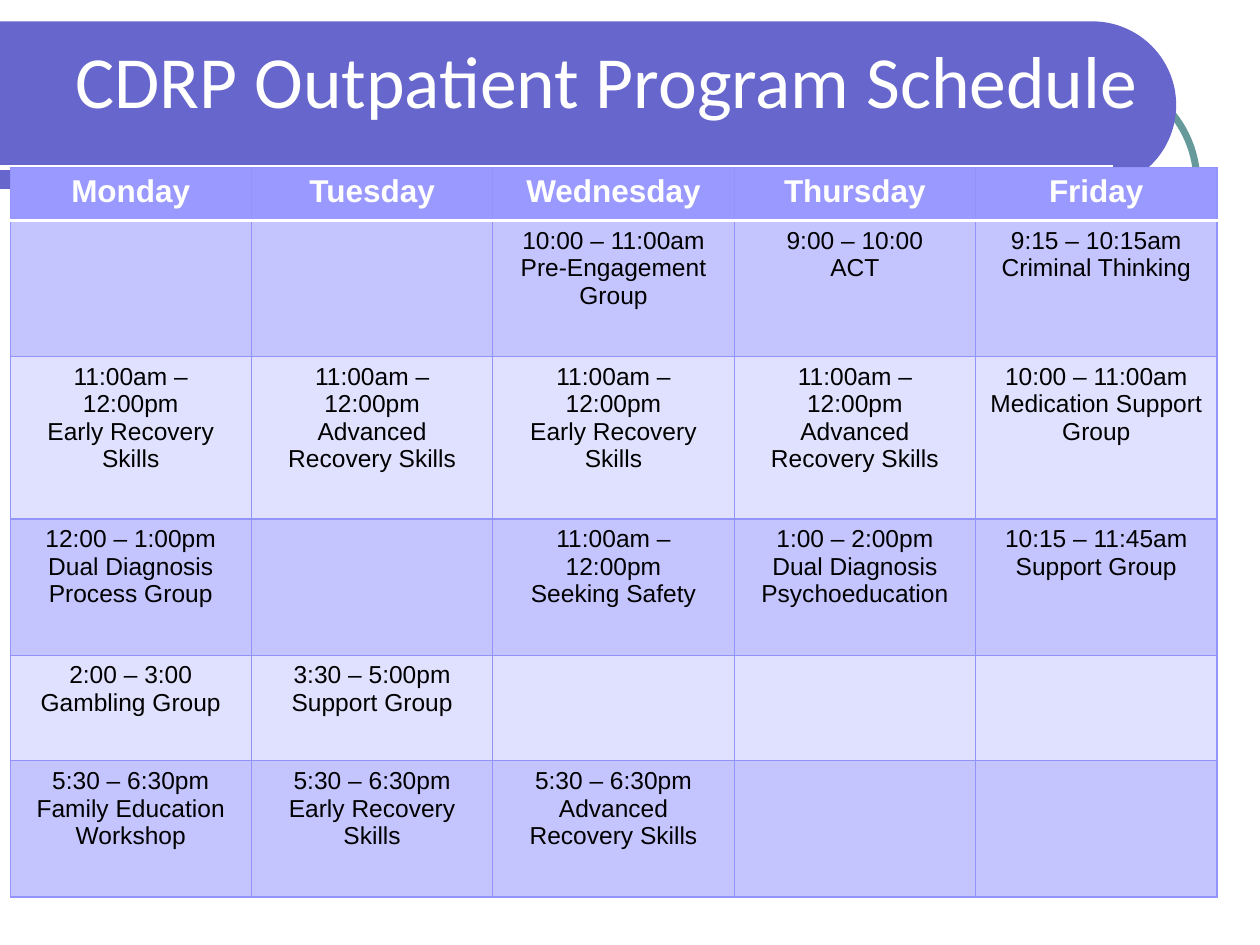
"""Build the weekly outpatient program schedule slide."""
import math

from lxml import etree
from pptx import Presentation
from pptx.dml.color import RGBColor
from pptx.enum import shapes, text
from pptx.oxml import ns
from pptx.util import Inches, Pt

TITLE = "CDRP Outpatient Program Schedule"
DAYS = ["Monday", "Tuesday", "Wednesday", "Thursday", "Friday"]
EARLY, ADVANCED = "Early Recovery Skills", "Advanced Recovery Skills"
LATE_MORNING, EVENING = "11:00am – 12:00pm", "5:30 – 6:30pm"
SESSIONS = [
    [[], [], ["10:00 – 11:00am", "Pre-Engagement Group"],
     ["9:00 – 10:00", "ACT"], ["9:15 – 10:15am", "Criminal Thinking"]],
    [[LATE_MORNING, EARLY], [LATE_MORNING, ADVANCED], [LATE_MORNING, EARLY],
     [LATE_MORNING, ADVANCED], ["10:00 – 11:00am", "Medication Support Group"]],
    [["12:00 – 1:00pm", "Dual Diagnosis Process Group"], [],
     [LATE_MORNING, "Seeking Safety"],
     ["1:00 – 2:00pm", "Dual Diagnosis Psychoeducation"],
     ["10:15 – 11:45am Support Group"]],
    [["2:00 – 3:00", "Gambling Group"], ["3:30 – 5:00pm", "Support Group"], [], [], []],
    [[EVENING, "Family Education Workshop"], [EVENING, EARLY], [EVENING, ADVANCED], [], []],
]
ROW_HEIGHTS = [0.42, 1.08, 1.29, 1.08, 0.84, 1.08]
BAND_FILLS = ["E0E0FF", "C4C4FF"]
HEADER_FONT = {"name": "Arial", "size": Pt(18), "bold": True}
BODY_FONT = {"name": "Arial", "size": Pt(14), "bold": False}
TITLE_FONT = {"name": "Calibri", "size": Pt(42), "bold": False}


def color(value):
    return RGBColor.from_string(value)


def paint(fill, value):
    fill.solid()
    fill.fore_color.rgb = color(value)


def write(frame, lines, font, ink, align):
    for index, line in enumerate(lines):
        para = frame.paragraphs[0] if index == 0 else frame.add_paragraph()
        para.alignment = align
        span = para.add_run()
        span.text = line
        for name, value in font.items():
            setattr(span.font, name, value)
        span.font.color.rgb = color(ink)


def set_borders(cell, borders):
    props = cell._tc.get_or_add_tcPr()
    for index, (side, (value, width)) in enumerate(borders.items()):
        line = etree.Element(ns.qn(f"a:ln{side}"), w=str(Pt(width)))
        solid = etree.SubElement(line, ns.qn("a:solidFill"))
        etree.SubElement(solid, ns.qn("a:srgbClr"), val=value)
        props.insert(index, line)


def add_frame(page):
    frame = page.shapes.add_shape(
        shapes.MSO_SHAPE.ROUNDED_RECTANGLE,
        Inches(0.42), Inches(0.58), Inches(9.08), Inches(6.25))
    frame.adjustments[0] = 0.14
    frame.shadow.inherit = False
    frame.fill.background()
    frame.line.color.rgb = color("669999")
    frame.line.width = Pt(4)


def add_banner(page):
    top, bottom, center_x = 0.17, 1.5, 8.67
    radius, middle = (bottom - top) / 2, (top + bottom) / 2
    angles = [math.radians(degree) for degree in range(-90, 91, 3)]
    arc = [(center_x + radius * math.cos(angle), middle + radius * math.sin(angle))
           for angle in angles]
    builder = page.shapes.build_freeform(0, Inches(top))
    builder.add_line_segments(
        [(Inches(x), Inches(y)) for x, y in arc + [(0, bottom)]], close=True)
    banner = builder.convert_to_shape()
    banner.shadow.inherit = False
    paint(banner.fill, "6666CC")
    banner.line.fill.background()


def add_rule(page):
    rule = page.shapes.add_connector(
        shapes.MSO_CONNECTOR.STRAIGHT, 0, Inches(1.33), Inches(8.83), Inches(1.33))
    rule.line.color.rgb = color("FFFFFF")
    rule.line.width = Pt(3)
    etree.SubElement(rule._element.spPr, ns.qn("a:effectLst"))


def place_title(page):
    title = page.shapes.title
    title.left, title.top, title.width, title.height = map(Inches, (0.5, 0, 9, 1.25))
    title.text_frame.vertical_anchor = text.MSO_ANCHOR.MIDDLE
    write(title.text_frame, [TITLE], TITLE_FONT, "FFFFFF", text.PP_ALIGN.LEFT)
    page.shapes._spTree.append(title._element)


def add_schedule(page):
    rows = [[[day] for day in DAYS]] + SESSIONS
    table = page.shapes.add_table(
        len(rows), len(DAYS), Inches(0.08), Inches(1.33),
        Inches(9.58), Inches(sum(ROW_HEIGHTS))).table
    grid, divider = ("9393FC", 0.75), ("FFFFFF", 2)
    for r, (row, height) in enumerate(zip(rows, ROW_HEIGHTS)):
        table.rows[r].height = Inches(height)
        header = r == 0
        font, ink = (HEADER_FONT, "FFFFFF") if header else (BODY_FONT, "000000")
        borders = {"L": grid, "R": grid, "T": divider if r == 1 else grid,
                   "B": divider if header else grid}
        for c, lines in enumerate(row):
            cell = table.cell(r, c)
            write(cell.text_frame, lines, font, ink, text.PP_ALIGN.CENTER)
            paint(cell.fill, "9999FF" if header else BAND_FILLS[r % 2])
            set_borders(cell, borders)


def main():
    deck = Presentation()
    deck.slide_width, deck.slide_height = Inches(10), Inches(7.5)
    page = deck.slides.add_slide(deck.slide_layouts[5])
    paint(page.background.fill, "FFFFFF")
    for build in (add_frame, add_banner, add_rule, place_title, add_schedule):
        build(page)
    deck.save("out.pptx")


if __name__ == "__main__":
    main()
